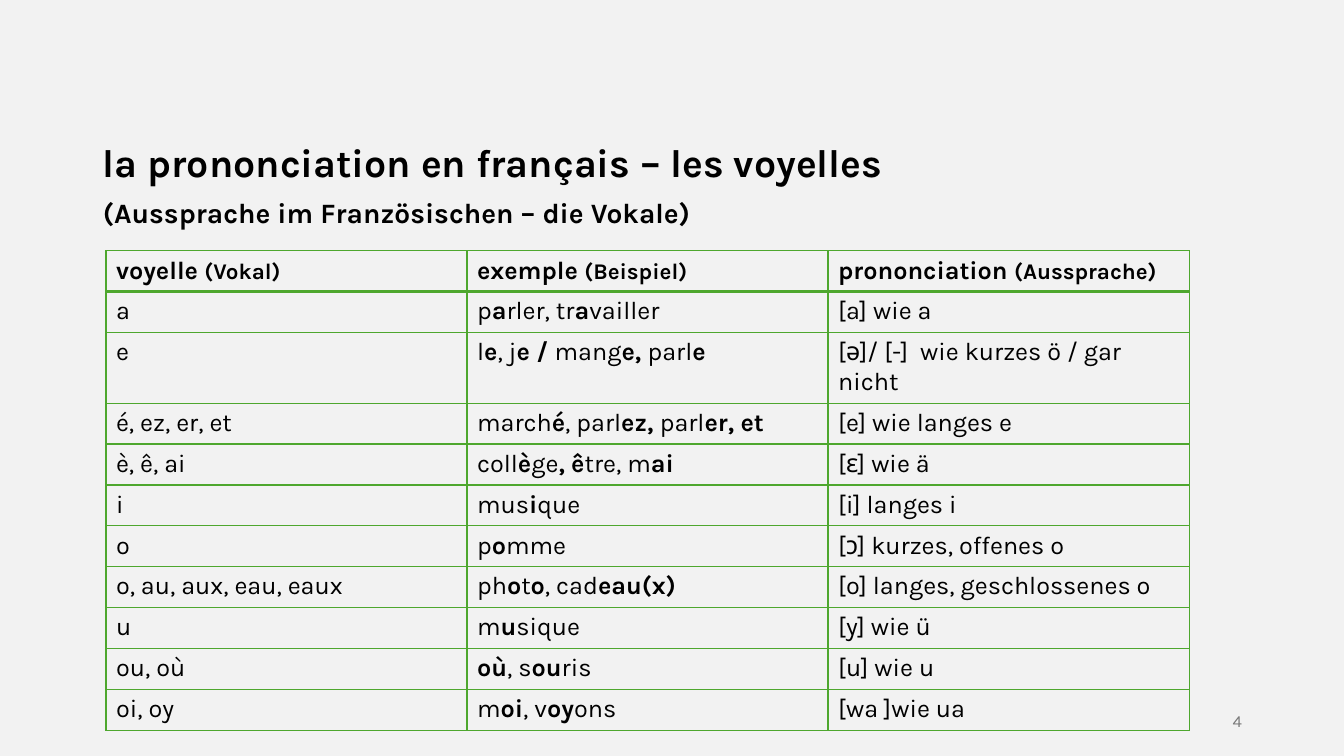
"""Build a slide with a table of French vowels and their pronunciation."""
from lxml.etree import SubElement
from pptx import Presentation
from pptx.dml.color import RGBColor
from pptx.enum.text import MSO_ANCHOR as Anchor, MSO_AUTO_SIZE as AutoSize, PP_ALIGN as Align
from pptx.oxml.ns import qn
from pptx.util import Cm, Pt

FONT = "Karla"
COLOURS = {"background": "F2F2F2", "text": "000000", "number": "797979", "border": "4EA72E"}
HEADING = [
    ("la prononciation en français – les voyelles", 28),
    ("(Aussprache im Französischen – die Vokale)", 20),
]
PAGE_NUMBER = "4"
HEADER = [("voyelle ", "(Vokal)"), ("exemple ", "(Beispiel)"), ("prononciation ", "(Aussprache)")]
# Asterisks enclose the bold letters.
VOWELS = [
    ("a", "p*a*rler, tr*a*vailler", "[a] wie a"),
    ("e", "l*e*, j*e / *mang*e, *parl*e*", "[ə]/ [-]  wie kurzes ö / gar nicht"),
    ("é, ez, er, et", "march*é*, parl*ez, *parl*er, et*", "[e] wie langes e"),
    ("è, ê, ai", "coll*è*ge*, ê*tre, m*ai*", "[ɛ] wie ä"),
    ("i", "mus*i*que", "[i] langes i"),
    ("o", "p*o*mme", "[ɔ] kurzes, offenes o"),
    ("o, au, aux, eau, eaux", "ph*o*t*o*, cad*eau(x)*", "[o] langes, geschlossenes o"),
    ("u", "m*u*sique", "[y] wie ü"),
    ("ou, où", "*où*, s*ou*ris", "[u] wie u"),
    ("oi, oy", "m*oi*, v*oy*ons", "[wa ]wie ua"),
]
TABLE_LEFT, TABLE_TOP, COLUMN_WIDTH, ROW_HEIGHT = 2.67, 6.32, 9.1, 1.03


def add_span(para, text, size, bold=False, colour="text"):
    span = para.add_run()
    span.text = text
    span.font.name = FONT
    span.font.size = Pt(size)
    span.font.bold = bold
    span.font.color.rgb = RGBColor.from_string(COLOURS[colour])


def add_heading(page):
    box = page.shapes.title
    box.left, box.top, box.width, box.height = Cm(2.34), Cm(3.48), Cm(29.21), Cm(2.7)
    frame = box.text_frame
    frame.auto_size = AutoSize.NONE
    frame.vertical_anchor = Anchor.TOP
    for index, (text, size) in enumerate(HEADING):
        para = frame.add_paragraph() if index else frame.paragraphs[0]
        para.alignment = Align.LEFT
        para.line_spacing = 0.9
        para.space_before = Pt(10)
        add_span(para, text, size, bold=True)


def style_cell(cell, bottom_width):
    properties = cell._tc.get_or_add_tcPr()
    for side, width in (("L", 1), ("R", 1), ("T", 1), ("B", bottom_width)):
        line = SubElement(properties, qn(f"a:ln{side}"), w=str(Pt(width)))
        fill = SubElement(line, qn("a:solidFill"))
        SubElement(fill, qn("a:srgbClr"), val=COLOURS["border"])
    cell.fill.background()


def add_vowel_table(page):
    row_count, column_count = len(VOWELS) + 1, len(HEADER)
    table = page.shapes.add_table(
        row_count, column_count, Cm(TABLE_LEFT), Cm(TABLE_TOP),
        Cm(COLUMN_WIDTH * column_count), Cm(ROW_HEIGHT * row_count)).table
    table.horz_banding = False
    for column, (french, german) in enumerate(HEADER):
        cell = table.cell(0, column)
        style_cell(cell, 2)
        para = cell.text_frame.paragraphs[0]
        add_span(para, french, 18, bold=True)
        add_span(para, german, 16, bold=True)
    for row, entry in enumerate(VOWELS, start=1):
        for column, marked in enumerate(entry):
            cell = table.cell(row, column)
            style_cell(cell, 1)
            para = cell.text_frame.paragraphs[0]
            for index, text in enumerate(marked.split("*")):
                if text:
                    add_span(para, text, 18, bold=index % 2 == 1)


def add_page_number(page):
    box = page.shapes.add_textbox(Cm(23.93), Cm(17.65), Cm(7.62), Cm(1.02))
    frame = box.text_frame
    frame.word_wrap = True
    frame.vertical_anchor = Anchor.MIDDLE
    para = frame.paragraphs[0]
    para.alignment = Align.RIGHT
    add_span(para, PAGE_NUMBER, 12, colour="number")


def main():
    deck = Presentation()
    deck.slide_width, deck.slide_height = Cm(33.87), Cm(19.05)
    page = deck.slides.add_slide(deck.slide_layouts.get_by_name("Title Only"))
    background = page.background.fill
    background.solid()
    background.fore_color.rgb = RGBColor.from_string(COLOURS["background"])
    add_heading(page)
    add_page_number(page)
    add_vowel_table(page)
    deck.save("out.pptx")


if __name__ == "__main__":
    main()
